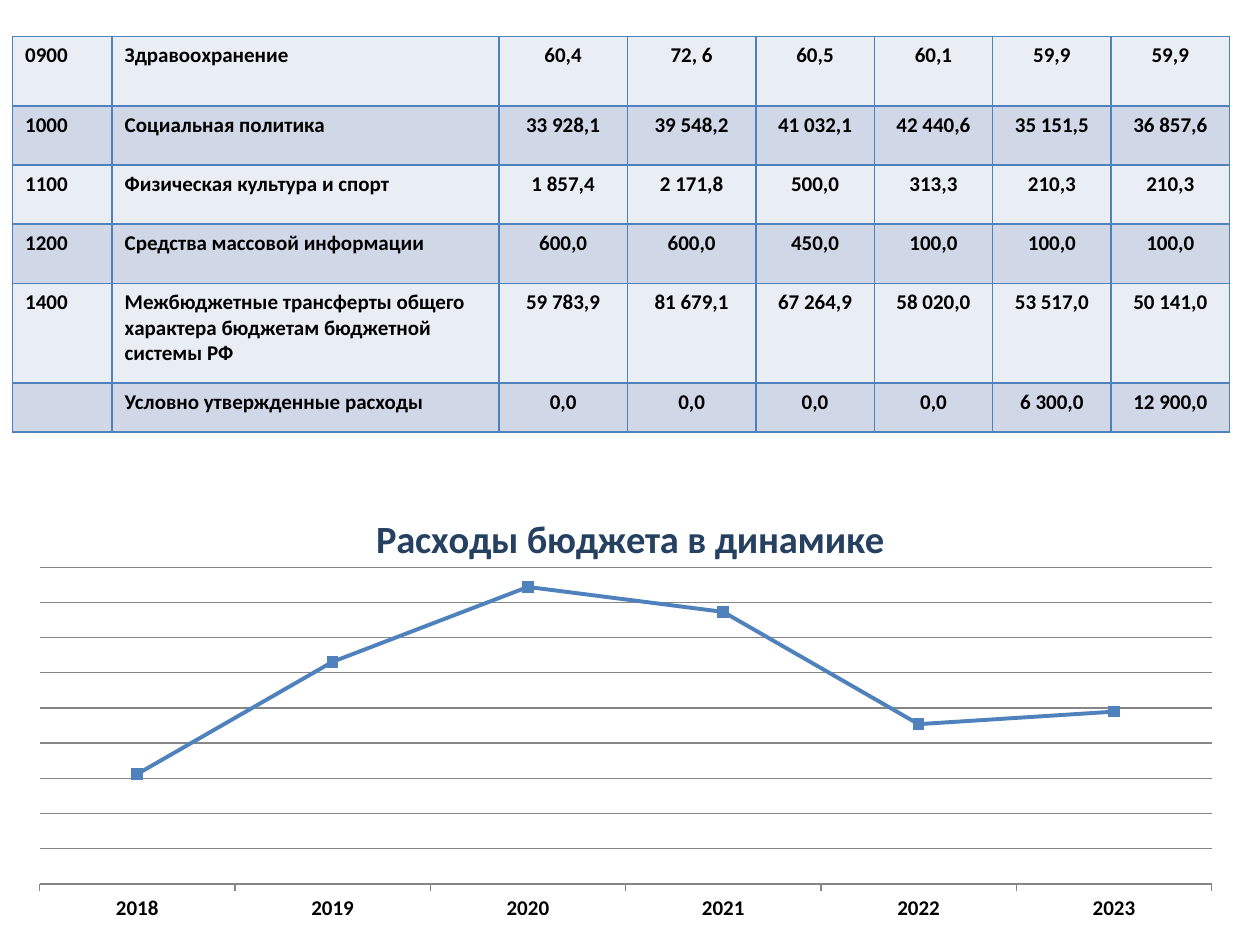
from lxml import etree
from pptx import Presentation
from pptx import util as u
from pptx.chart.data import CategoryChartData
from pptx.dml.color import RGBColor
from pptx.enum import chart as ch, text
from pptx.oxml import ns

FONT = "Calibri"
BLACK = RGBColor(0, 0, 0)
BLUE = RGBColor(0x4F, 0x81, 0xBD)
NAVY = RGBColor(0x25, 0x40, 0x61)
GREY = RGBColor(0x86, 0x86, 0x86)
BANDS = RGBColor(0xE9, 0xED, 0xF4), RGBColor(0xD0, 0xD8, 0xE8)

COLUMN_WIDTHS = [0.79, 3.07] + [1.02] * 2 + [0.94] * 4
ROW_HEIGHTS = [0.55] + [0.47] * 3 + [0.79, 0.39]
EXPENSES = [
    ("0900", "Здравоохранение", "60,4", "72, 6", "60,5", "60,1", "59,9", "59,9"),
    ("1000", "Социальная политика",
     "33 928,1", "39 548,2", "41 032,1", "42 440,6", "35 151,5", "36 857,6"),
    ("1100", "Физическая культура и спорт",
     "1 857,4", "2 171,8", "500,0", "313,3", "210,3", "210,3"),
    ("1200", "Средства массовой информации",
     "600,0", "600,0", "450,0", "100,0", "100,0", "100,0"),
    ("1400", "Межбюджетные трансферты общего характера бюджетам бюджетной системы РФ",
     "59 783,9", "81 679,1", "67 264,9", "58 020,0", "53 517,0", "50 141,0"),
    ("", "Условно утвержденные расходы",
     "0,0", "0,0", "0,0", "0,0", "6 300,0", "12 900,0"),
]
YEARS = ["2018", "2019", "2020", "2021", "2022", "2023"]
TREND = [85, 94, 100, 98, 89, 90]


def style_font(font, size, color=BLACK, bold=True):
    font.name, font.size, font.bold = FONT, u.Pt(size), bold
    font.color.rgb = color


def border_cell(cell):
    properties = cell._tc.get_or_add_tcPr()
    for side in ("a:lnL", "a:lnR", "a:lnT", "a:lnB"):
        line = etree.SubElement(properties, ns.qn(side), w=str(u.Pt(1)))
        fill = etree.SubElement(line, ns.qn("a:solidFill"))
        etree.SubElement(fill, ns.qn("a:srgbClr"), val=str(BLUE))


def fill_cell(cell, wording, band, centred):
    border_cell(cell)
    cell.fill.solid()
    cell.fill.fore_color.rgb = band
    paragraph = cell.text_frame.paragraphs[0]
    paragraph.text = wording
    if centred:
        paragraph.alignment = text.PP_ALIGN.CENTER
    for run in paragraph.runs:
        style_font(run.font, 12)
    if not wording:
        etree.SubElement(paragraph._p, ns.qn("a:endParaRPr"), sz="1200")


def add_expense_table(slide):
    frame = slide.shapes.add_table(
        len(EXPENSES), len(COLUMN_WIDTHS), u.Inches(0.1), u.Inches(0.29),
        u.Inches(sum(COLUMN_WIDTHS)), u.Inches(sum(ROW_HEIGHTS)))
    table = frame.table
    table.first_row = False
    for column, width in zip(table.columns, COLUMN_WIDTHS):
        column.width = u.Inches(width)
    for row, height in zip(table.rows, ROW_HEIGHTS):
        row.height = u.Inches(height)
    for r, expense in enumerate(EXPENSES):
        for c, wording in enumerate(expense):
            fill_cell(table.cell(r, c), wording, BANDS[r % 2], c >= 2)


def place_in_chart(element, position, **shares):
    """Fix a chart part's place, in shares of the chart's size."""
    layout = element.find(ns.qn("c:layout"))
    if layout is None:
        layout = etree.Element(ns.qn("c:layout"))
        element.insert(position, layout)
    manual = etree.SubElement(layout, ns.qn("c:manualLayout"))
    if "w" in shares:
        etree.SubElement(manual, ns.qn("c:layoutTarget"), val="inner")
    for mode in ("c:xMode", "c:yMode"):
        etree.SubElement(manual, ns.qn(mode), val="edge")
    for key, share in shares.items():
        etree.SubElement(manual, ns.qn("c:" + key), val=str(share))


def format_axes(chart):
    years = chart.category_axis
    years.major_tick_mark = ch.XL_TICK_MARK.OUTSIDE
    years.format.line.color.rgb = GREY
    style_font(years.tick_labels.font, 12)

    amounts = chart.value_axis
    amounts.visible = False
    amounts.minimum_scale, amounts.maximum_scale = 76.2, 101.58
    amounts.major_unit = 2.82
    amounts.tick_labels.number_format = "0.0"
    amounts.tick_labels.number_format_is_linked = False
    amounts.has_major_gridlines = True
    gridline = amounts.major_gridlines.format.line
    gridline.color.rgb, gridline.width = GREY, u.Pt(0.75)


def format_trend(series):
    series.smooth = False
    series.format.line.color.rgb = BLUE
    series.format.line.width = u.Pt(2.25)
    series.marker.style = ch.XL_MARKER_STYLE.SQUARE
    series.marker.size = 6
    series.marker.format.fill.solid()
    series.marker.format.fill.fore_color.rgb = BLUE
    series.marker.format.line.color.rgb = BLUE


def add_trend_chart(slide):
    data = CategoryChartData()
    data.categories = YEARS
    data.add_series("Series 1", TREND)
    chart = slide.shapes.add_chart(
        ch.XL_CHART_TYPE.LINE_MARKERS, u.Inches(0.12), u.Inches(3.83),
        u.Inches(9.69), u.Inches(3.54), data).chart
    style_font(chart.font, 10, bold=False)
    chart.has_legend = False
    chart.has_title = True
    heading = chart.chart_title.text_frame
    heading.text = "Расходы бюджета в динамике"
    style_font(heading.paragraphs[0].runs[0].font, 22, NAVY)
    chart.chart_title.include_in_layout = False
    place_in_chart(chart.chart_title._element, 1, x=0.29, y=0.05)
    plot_area = chart._chartSpace.chart.plotArea
    place_in_chart(plot_area, 0, x=0.02, y=0.19, w=0.96, h=0.71)
    chart.plots[0].vary_by_categories = False
    format_axes(chart)
    format_trend(chart.plots[0].series[0])


def main():
    deck = Presentation()
    deck.slide_width, deck.slide_height = u.Inches(10), u.Inches(7.5)
    slide = deck.slides.add_slide(deck.slide_layouts[6])
    add_expense_table(slide)
    add_trend_chart(slide)
    deck.save("out.pptx")


if __name__ == "__main__":
    main()
